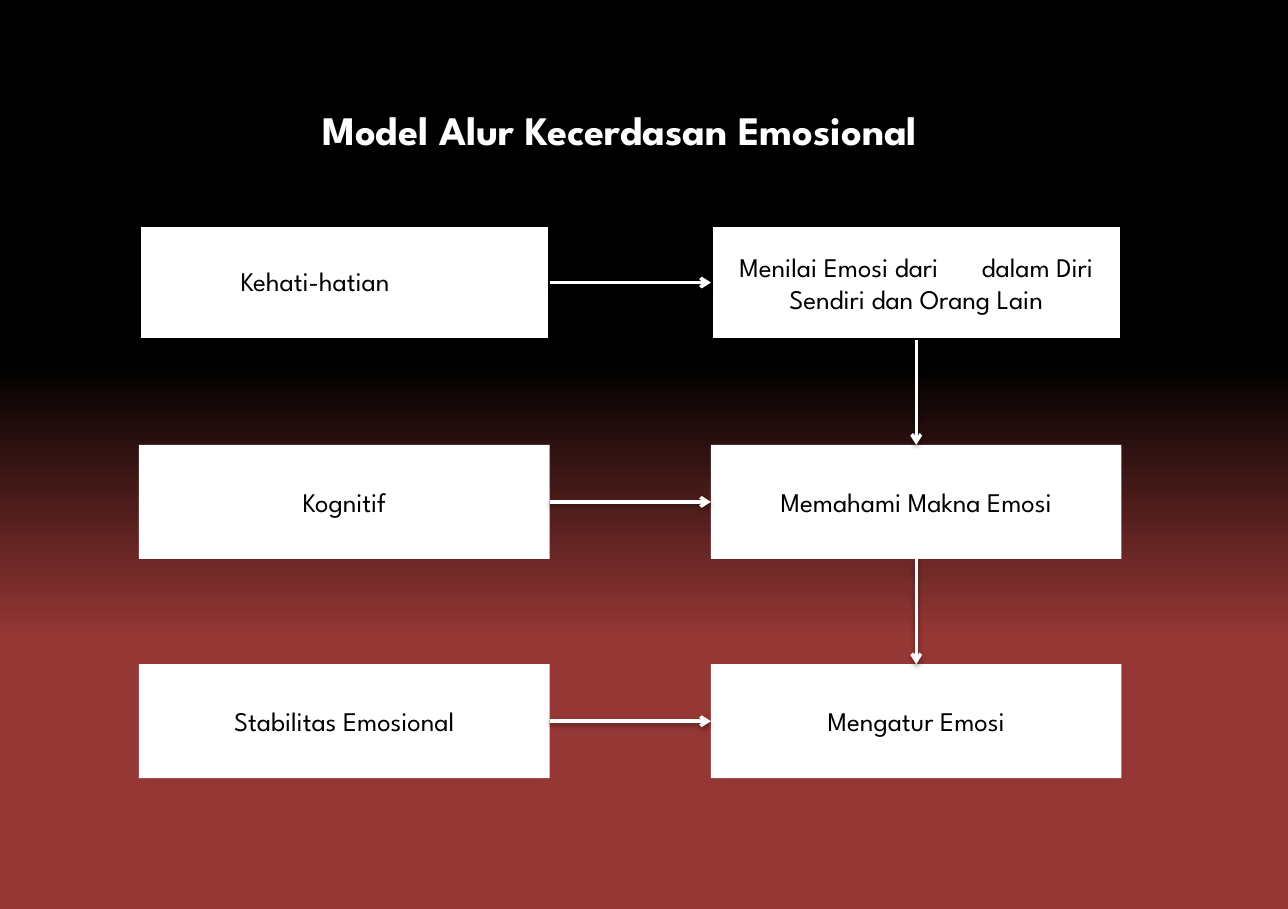
from dataclasses import dataclass
from pptx import Presentation, oxml
from pptx import util as u
from pptx.dml.color import RGBColor
from pptx.enum import shapes, text
from pptx.oxml.ns import nsdecls, qn


@dataclass(frozen=True)
class Theme:
    font: str = "League Spartan"
    black: str = "000000"
    white: str = "FFFFFF"
    red: str = "953735"
    head: int = 24
    body: int = 16
    rule: int = 2


T = Theme()
BOTTOM, LEFT, TOP, RIGHT = 2, 1, 0, 3


def rgb(code):
    return RGBColor.from_string(code)


def write(frame, words, size, color, bold=None, align=None):
    par = frame.paragraphs[0]
    par.alignment = align
    run = par.add_run()
    run.text = words
    font = run.font
    font.name, font.size, font.bold = T.font, u.Pt(size), bold
    font.color.rgb = rgb(color)


def label(slide, box, words, size, color, bold=None):
    frame = slide.shapes.add_textbox(*map(u.Pt, box)).text_frame
    frame.word_wrap = False
    frame.auto_size = text.MSO_AUTO_SIZE.SHAPE_TO_FIT_TEXT
    write(frame, words, size, color, bold)


def card(slide, box, words, edge):
    rect = slide.shapes.add_shape(shapes.MSO_SHAPE.RECTANGLE, *map(u.Pt, box))
    rect.shadow.inherit = False
    rect.fill.solid()
    rect.fill.fore_color.rgb = rgb(T.white)
    if edge:
        rect.line.color.rgb = rgb(T.black)
        rect.line.width = u.Pt(T.rule)
    else:
        rect.line.fill.background()
    if words:
        rect.text_frame.vertical_anchor = text.MSO_ANCHOR.MIDDLE
        write(rect.text_frame, words, T.body, T.black, align=text.PP_ALIGN.CENTER)
    return rect


def arrow(slide, start, side, end, into):
    link = slide.shapes.add_connector(shapes.MSO_CONNECTOR.STRAIGHT, 0, 0, 0, 0)
    link.begin_connect(start, side)
    link.end_connect(end, into)
    link.line.color.rgb = rgb(T.white)
    link.line.width = u.Pt(T.rule)
    # Arrowhead and soft shadow
    link.line._get_or_add_ln().append(
        oxml.parse_xml(f'<a:tailEnd {nsdecls("a")} type="arrow"/>'))
    link._element.spPr.append(oxml.parse_xml(
        f'<a:effectLst {nsdecls("a")}>'
        f'<a:outerShdw blurRad="{u.Pt(3.1)}" dist="{u.Pt(1.6)}" dir="5400000" rotWithShape="0">'
        f'<a:srgbClr val="{T.black}"><a:alpha val="38000"/></a:srgbClr>'
        '</a:outerShdw></a:effectLst>'))


def ground(slide):
    fill = slide.background.fill
    fill.gradient()
    fill.gradient_angle = 270
    stops = slide.element.find(".//" + qn("a:gsLst"))
    for stop in list(stops):
        stops.remove(stop)
    for pos, color in ((0, T.black), (40, T.black), (70, T.red), (100, T.red)):
        stops.append(oxml.parse_xml(
            f'<a:gs {nsdecls("a")} pos="{pos * 1000}"><a:srgbClr val="{color}"/></a:gs>'))


def flow(slide, box, rows):
    left, top, width, height = box
    wide, high = 244, 67.7
    step = (height - high) / (len(rows) - 1)
    above = None
    for i, (cause, skill) in enumerate(rows):
        y = top + i * step
        first = i == 0
        # The first cause has its own label, set left of centre
        source = card(slide, (left, y, wide, high), None if first else cause, first)
        if first:
            label(slide, (left + 53.3, y + 19.5, 115.2, 26.6), cause, T.body, T.black)
        target = card(slide, (left + width - wide, y, wide, high), skill, first)
        arrow(slide, source, RIGHT, target, LEFT)
        if above is not None:
            arrow(slide, above, BOTTOM, target, TOP)
        above = target


def main():
    deck = Presentation()
    deck.slide_width, deck.slide_height = u.Pt(765.4), u.Pt(540)
    slide = deck.slides.add_slide(deck.slide_layouts[6])
    ground(slide)
    # Title
    label(slide, (184.3, 59, 434.9, 36), "Model Alur Kecerdasan Emosional",
          T.head, T.white, True)
    # Causes on the left, skills on the right
    flow(slide, (82.6, 134, 583.9, 328.3), (
        ("Kehati-hatian", "Menilai Emosi dari \tdalam Diri Sendiri dan Orang Lain"),
        ("Kognitif", "Memahami Makna Emosi"),
        ("Stabilitas Emosional", "Mengatur Emosi"),
    ))
    deck.save("out.pptx")


if __name__ == "__main__":
    main()
